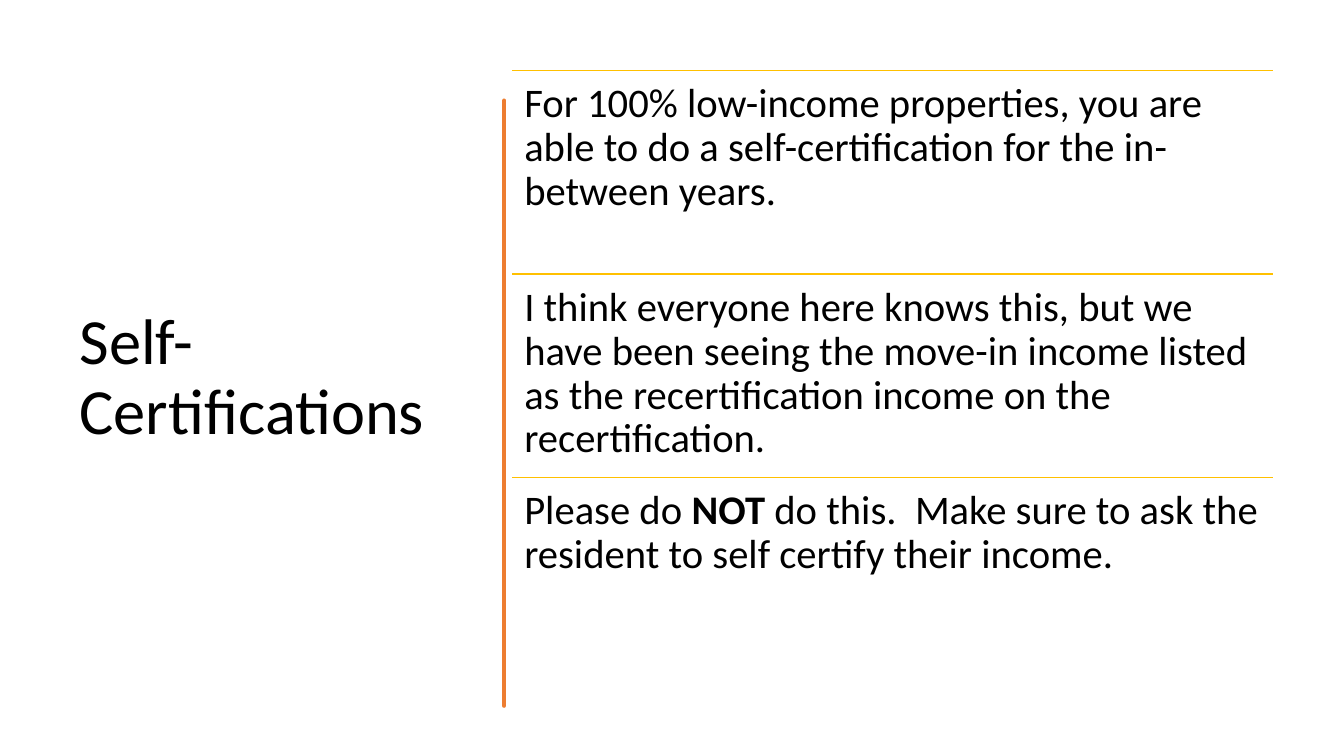
"""Builds the Self-Certifications slide: a title, a wavy divider and three ruled notes."""
from dataclasses import dataclass

from lxml.etree import SubElement
from pptx import Presentation
from pptx.dml.color import RGBColor as Rgb
from pptx.enum.shapes import MSO_CONNECTOR as Conn
from pptx.enum.text import MSO_ANCHOR as Anchor, MSO_AUTO_SIZE as Fit, PP_ALIGN as Align
from pptx.oxml.ns import qn
from pptx.util import Inches, Pt


@dataclass(frozen=True)
class Theme:
    font: str = "Calibri"
    ink: Rgb = Rgb(0, 0, 0)
    wave: Rgb = Rgb(0xED, 0x7D, 0x31)
    rule: Rgb = Rgb(0xFF, 0xC0, 0x00)
    head: Pt = Pt(46)
    body: Pt = Pt(29)


def write(frame, runs, size, pad, anchor):
    form = dict(word_wrap=True, auto_size=Fit.NONE, vertical_anchor=anchor)
    form |= {f"margin_{side}": pad for side in ("left", "right")}
    for key, val in form.items():
        setattr(frame, key, val)
    para = frame.paragraphs[0]
    para.alignment, para.line_spacing = Align.LEFT, 0.9
    for text, bold in runs:
        run = para.add_run()
        run.text = text
        for key, val in dict(name=theme.font, size=size, bold=bold).items():
            setattr(run.font, key, val)
        run.font.color.rgb = theme.ink


theme = Theme()
deck = Presentation()
deck.slide_width, deck.slide_height = Inches(13.33), Inches(7.5)
slide = deck.slides.add_slide(deck.slide_layouts[5])
shapes = slide.shapes

title = shapes.title
for key, val in dict(left=0.69, top=0.7, width=3.74, height=6.11).items():
    setattr(title, key, Inches(val))
write(title.text_frame, [("Self-Certifications", False)], theme.head, Inches(0.1), Anchor.MIDDLE)

right = [(4.75, 0.84), (4.76, 1.15), (4.74, 1.7), (4.75, 2.26), (4.75, 2.94),
         (4.76, 3.3), (4.75, 3.56), (4.77, 4), (4.75, 4.36), (4.73, 4.7),
         (4.75, 5.1), (4.77, 5.5), (4.75, 5.84), (4.74, 6.2), (4.75, 6.76)]
left = [(4.73, 6.76), (4.72, 6.4), (4.73, 6.13), (4.73, 5.57), (4.72, 5.2),
        (4.73, 4.77), (4.72, 4.45), (4.73, 4.15), (4.73, 3.35), (4.72, 2.95),
        (4.73, 2.5), (4.74, 2.1), (4.73, 1.81), (4.72, 1.55), (4.74, 1.1), (4.73, 0.84)]
edge = right + left
pen = shapes.build_freeform(*edge[0], scale=Inches(1))
pen.add_line_segments(edge[1:], close=True)
wave = pen.convert_to_shape()
wave.shadow.inherit = False
wave.fill.solid()
wave.fill.fore_color.rgb = wave.line.color.rgb = theme.wave
wave.line.width = Pt(3.25)
SubElement(wave.line._get_or_add_ln(), qn("a:round"))

notes = [
    [("For 100% low-income properties, you are able to do a self-certification "
      "for the in-between years.", False)],
    [("I think everyone here knows this, but we have been seeing the move-in income "
      "listed as the recertification income on the recertification.", False)],
    [("Please do ", False), ("NOT", True),
     (" do this.  Make sure to ask the resident to self certify their income.", False)],
]
x, wide, step, pad = Inches(5.08), Inches(7.55), Inches(2.02), Inches(0.12)
for row, runs in enumerate(notes):
    y = Inches(0.7) + row * step
    rule = shapes.add_connector(Conn.STRAIGHT, x, y, x + wide, y)
    rule.line.color.rgb, rule.line.width = theme.rule, Pt(1)
    SubElement(rule._element.spPr, qn("a:effectLst"))
    frame = shapes.add_textbox(x, y, wide, step).text_frame
    frame.margin_top = frame.margin_bottom = pad
    write(frame, runs, theme.body, pad, Anchor.TOP)

deck.save("out.pptx")
